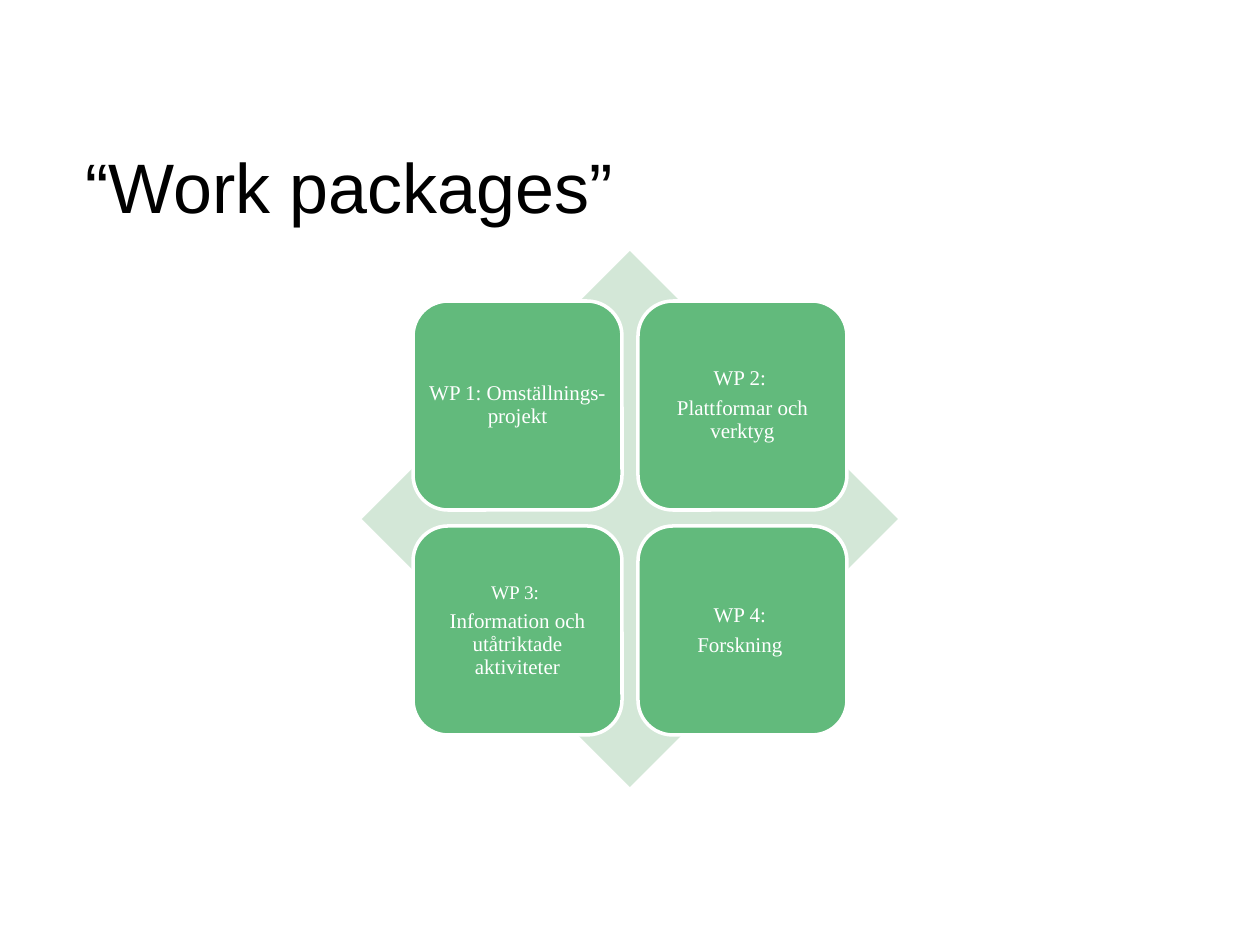
from dataclasses import dataclass

from pptx import Presentation
from pptx.dml.color import RGBColor
from pptx.enum.shapes import MSO_SHAPE
from pptx.enum.text import MSO_ANCHOR, PP_ALIGN
from pptx.util import Emu, Pt

TITLE = "“Work packages”"
WORK_PACKAGES = [
    [("WP 1: Omställnings-projekt", 12)],
    [("WP 2: ", 12), ("Plattformar och verktyg", 12)],
    [("WP 3: ", 11), ("Information och utåtriktade aktiviteter", 12)],
    [("WP 4: ", 12), ("Forskning ", 12)],
]


@dataclass(frozen=True)
class Theme:
    ink: RGBColor = RGBColor(0, 0, 0)
    white: RGBColor = RGBColor(255, 255, 255)
    tile: RGBColor = RGBColor.from_string("62BA7C")
    diamond: RGBColor = RGBColor.from_string("D3E7D7")
    title_font: str = "Arial"
    tile_font: str = "Times New Roman"
    title_size: int = 40
    tile_gap: float = 4.2
    outline: int = 2


THEME = Theme()
EMU_PER_PX = 914400 / 126
PAGE_WIDTH, PAGE_HEIGHT = 1260, 945
TITLE_AREA = (73, 106, 1134, 158)
DIAMOND_AREA = (362, 251, 536, 536)
TILE_LEFT, TILE_TOP, TILE_SIZE, TILE_PITCH = 413, 301, 209, 225
TILE_INSET = 6


def px(length):
    return Emu(round(length * EMU_PER_PX))


def add_span(para, text, font, size, color):
    span = para.add_run()
    span.text = text
    span.font.name = font
    span.font.size = Pt(size)
    span.font.color.rgb = color


def add_filled_shape(page, preset, area, color):
    shape = page.shapes.add_shape(preset, *map(px, area))
    shape.shadow.inherit = False
    shape.fill.solid()
    shape.fill.fore_color.rgb = color
    return shape


def add_title(page):
    frame = page.shapes.add_textbox(*map(px, TITLE_AREA)).text_frame
    frame.word_wrap = True
    frame.vertical_anchor = MSO_ANCHOR.MIDDLE
    add_span(frame.paragraphs[0], TITLE, THEME.title_font, THEME.title_size, THEME.ink)


def add_tile(page, index, lines):
    row, column = divmod(index, 2)
    area = (TILE_LEFT + column * TILE_PITCH, TILE_TOP + row * TILE_PITCH, TILE_SIZE, TILE_SIZE)
    tile = add_filled_shape(page, MSO_SHAPE.ROUNDED_RECTANGLE, area, THEME.tile)
    tile.line.color.rgb = THEME.white
    tile.line.width = Pt(THEME.outline)
    frame = tile.text_frame
    frame.word_wrap = True
    frame.vertical_anchor = MSO_ANCHOR.MIDDLE
    frame.margin_left = frame.margin_right = px(TILE_INSET)
    frame.margin_top = frame.margin_bottom = px(TILE_INSET)
    for number, (text, size) in enumerate(lines):
        para = frame.add_paragraph() if number else frame.paragraphs[0]
        para.alignment = PP_ALIGN.CENTER
        para.line_spacing = 0.9
        para.space_after = Pt(THEME.tile_gap)
        add_span(para, text, THEME.tile_font, size, THEME.white)


def main():
    deck = Presentation()
    deck.slide_width, deck.slide_height = px(PAGE_WIDTH), px(PAGE_HEIGHT)
    page = deck.slides.add_slide(deck.slide_layouts[6])
    diamond = add_filled_shape(page, MSO_SHAPE.DIAMOND, DIAMOND_AREA, THEME.diamond)
    diamond.line.fill.background()
    for index, lines in enumerate(WORK_PACKAGES):
        add_tile(page, index, lines)
    add_title(page)
    deck.save("out.pptx")


if __name__ == "__main__":
    main()
